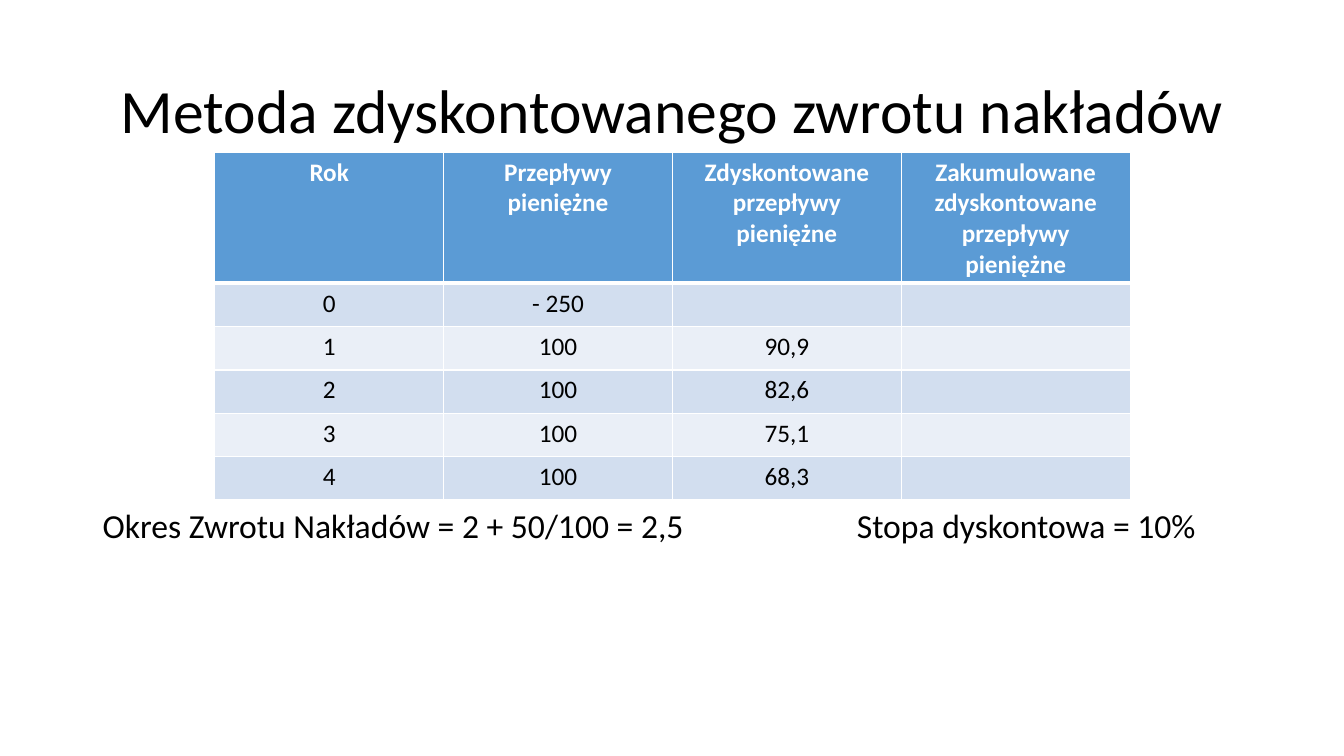
from lxml import etree
from pptx import Presentation
from pptx.dml.color import RGBColor
from pptx.enum.text import MSO_ANCHOR, PP_ALIGN
from pptx.oxml.ns import qn
from pptx.util import Inches, Pt

CENTER = PP_ALIGN.CENTER
LEFT = PP_ALIGN.LEFT
MIDDLE = MSO_ANCHOR.MIDDLE
TITLE_ONLY = 5
FONT = "Calibri"
COLORS = {
    "text": "000000",
    "white": "FFFFFF",
    "header": "5B9BD5",
    "band_dark": "D2DEEF",
    "band_light": "EAEFF7",
}
CASH_FLOWS = [
    ["Rok", "Przepływy pieniężne", "Zdyskontowane przepływy pieniężne",
     "Zakumulowane zdyskontowane przepływy pieniężne"],
    ["0", "- 250", "", ""],
    ["1", "100", "90,9", ""],
    ["2", "100", "82,6", ""],
    ["3", "100", "75,1", ""],
    ["4", "100", "68,3", ""],
]
COLUMN_WIDTH = 2.27
HEADER_HEIGHT = 1.3
ROW_HEIGHT = 0.43


def color(name):
    return RGBColor.from_string(COLORS[name])


def write(frame, text, size, color_name="text", align=LEFT, bold=False):
    frame.text = text
    para = frame.paragraphs[0]
    para.alignment = align
    para.font.size = Pt(size)
    for span in para.runs:
        span.font.name = FONT
        span.font.size = Pt(size)
        span.font.bold = bold
        span.font.color.rgb = color(color_name)


def set_title(page, text):
    title = page.shapes.title
    title.left, title.top = Inches(0.92), Inches(0.4)
    title.width, title.height = Inches(11.5), Inches(1.45)
    write(title.text_frame, text, 44, align=CENTER)
    title.text_frame.vertical_anchor = MIDDLE
    title.text_frame.paragraphs[0].line_spacing = 0.9


def add_note(page, left, width, text):
    box = page.shapes.add_textbox(
        Inches(left), Inches(4.96), Inches(width), Inches(0.5))
    box.text_frame.word_wrap = True
    write(box.text_frame, text, 24)


def set_borders(cell, bottom_width, top_width):
    """Draw white lines on the four sides, with widths in points."""
    properties = cell._tc.get_or_add_tcPr()
    widths = {"a:lnL": 1, "a:lnR": 1, "a:lnT": top_width, "a:lnB": bottom_width}
    for tag, width in widths.items():
        line = etree.SubElement(properties, qn(tag), w=str(Pt(width)))
        fill = etree.SubElement(line, qn("a:solidFill"))
        etree.SubElement(fill, qn("a:srgbClr"), val=COLORS["white"])


def add_cash_flow_table(page, rows):
    column_count = len(rows[0])
    height = HEADER_HEIGHT + ROW_HEIGHT * (len(rows) - 1)
    table = page.shapes.add_table(
        len(rows), column_count, Inches(2.13), Inches(1.51),
        Inches(COLUMN_WIDTH * column_count), Inches(height)).table
    for column in table.columns:
        column.width = Inches(COLUMN_WIDTH)
    for row_index, values in enumerate(rows):
        is_header = row_index == 0
        table.rows[row_index].height = Inches(
            HEADER_HEIGHT if is_header else ROW_HEIGHT)
        band = "band_dark" if row_index % 2 else "band_light"
        for column_index, value in enumerate(values):
            cell = table.cell(row_index, column_index)
            write(cell.text_frame, value, 18,
                  "white" if is_header else "text", CENTER, is_header)
            set_borders(cell, bottom_width=3 if is_header else 1,
                        top_width=3 if row_index == 1 else 1)
            cell.fill.solid()
            cell.fill.fore_color.rgb = color("header" if is_header else band)


def main():
    deck = Presentation()
    deck.slide_width, deck.slide_height = Inches(13.33), Inches(7.5)
    page = deck.slides.add_slide(deck.slide_layouts[TITLE_ONLY])
    set_title(page, "Metoda zdyskontowanego zwrotu nakładów")
    add_note(page, 0.92, 6.85, "Okres Zwrotu Nakładów = 2 + 50/100 = 2,5")
    add_note(page, 8.4, 4.5, "Stopa dyskontowa = 10%")
    add_cash_flow_table(page, CASH_FLOWS)
    deck.save("out.pptx")


if __name__ == "__main__":
    main()
